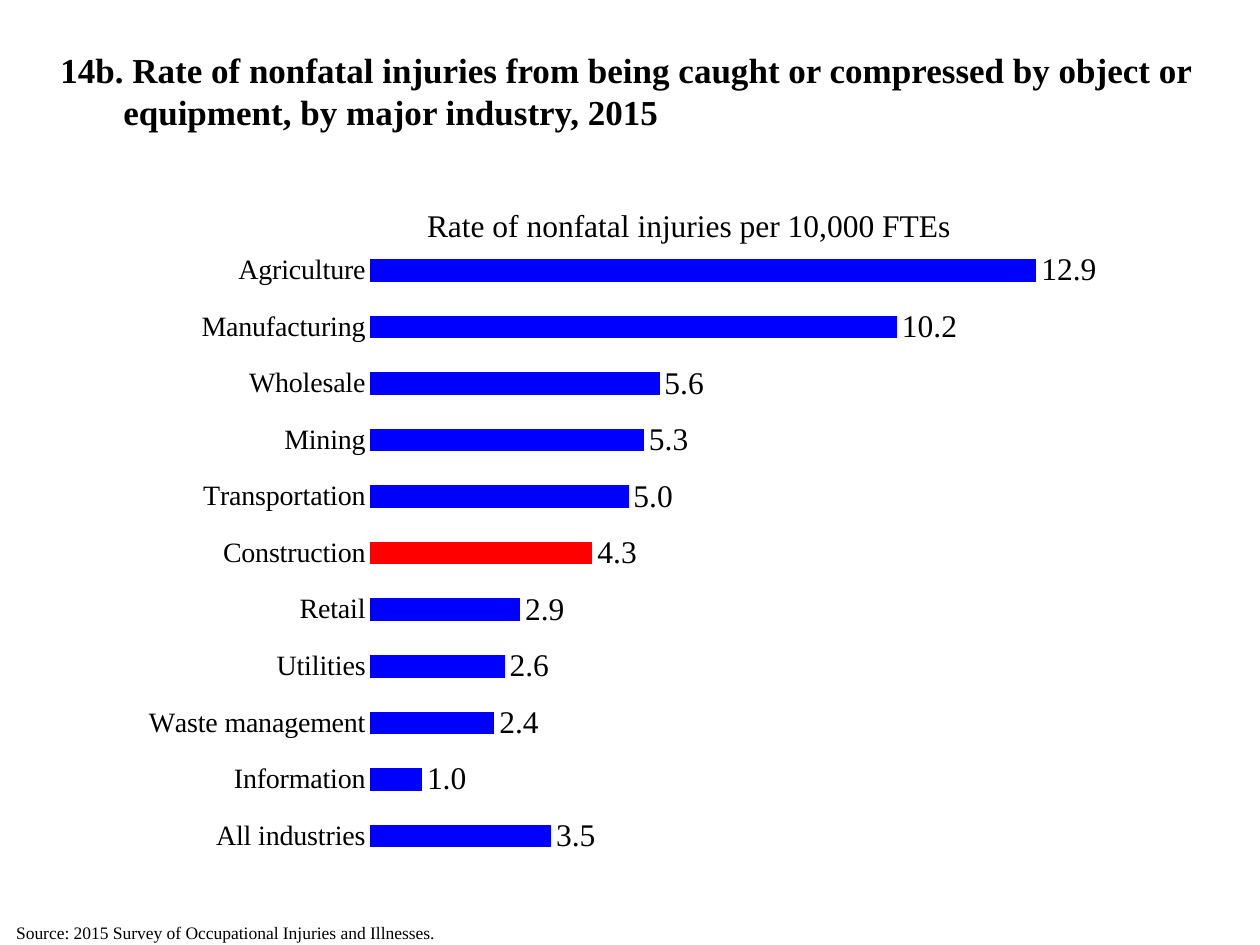
from dataclasses import dataclass

from lxml import etree
from pptx import Presentation
from pptx.chart.data import CategoryChartData
from pptx.dml.color import RGBColor
from pptx.enum import chart as charts, text
from pptx.oxml import ns
from pptx.util import Inches, Pt


@dataclass(frozen=True)
class Theme:
    font: str = "Times New Roman"
    ink: RGBColor = RGBColor(0, 0, 0)
    bar: RGBColor = RGBColor(0, 0, 255)
    highlight: RGBColor = RGBColor(255, 0, 0)
    title_size: int = 20
    chart_size: int = 18
    category_size: int = 16
    source_size: int = 10


THEME = Theme()
HIGHLIGHTED = "Construction"
RATES = {
    "All industries": 3.5,
    "Information": 1.0,
    "Waste management": 2.4,
    "Utilities": 2.6,
    "Retail": 2.9,
    "Construction": 4.3,
    "Transportation": 5.0,
    "Mining": 5.3,
    "Wholesale": 5.6,
    "Manufacturing": 10.2,
    "Agriculture": 12.9,
}


def apply(target, formats):
    for name, value in formats.items():
        setattr(target, name, value)


def style_font(font, size, bold=False):
    apply(font, {"name": THEME.font, "size": Pt(size), "bold": bold})
    font.color.rgb = THEME.ink


def add_text(slide, box, wording, size, bold=False, anchor=text.MSO_ANCHOR.TOP):
    frame = slide.shapes.add_textbox(*map(Inches, box)).text_frame
    apply(frame, {"word_wrap": True, "vertical_anchor": anchor})
    paragraph = frame.paragraphs[0]
    run = paragraph.add_run()
    run.text = wording
    style_font(run.font, size, bold)
    return paragraph


def set_hanging_indent(paragraph, indent):
    properties = paragraph._p.get_or_add_pPr()
    properties.set("marL", str(indent))
    properties.set("indent", str(-indent))


def place_manually(parent, position, values):
    for old in parent.findall(ns.qn("c:layout")):
        parent.remove(old)
    layout = etree.Element(ns.qn("c:layout"))
    manual = etree.SubElement(layout, ns.qn("c:manualLayout"))
    for name, value in values.items():
        etree.SubElement(manual, ns.qn(f"c:{name}")).set("val", str(value))
    parent.insert(position, layout)


def add_chart_title(chart, wording):
    frame = chart.chart_title.text_frame
    frame.text = wording
    style_font(frame.paragraphs[0].runs[0].font, THEME.chart_size)
    chart.chart_title.include_in_layout = False
    place_manually(chart.chart_title._element, 1,
                   {"xMode": "edge", "yMode": "edge", "x": 0.3, "y": 0.03})


def style_axes(chart):
    apply(chart.value_axis, {
        "visible": False, "has_major_gridlines": False,
        "minimum_scale": 0, "maximum_scale": 14, "major_unit": 1,
    })
    axis = chart.category_axis
    apply(axis, {
        "major_tick_mark": charts.XL_TICK_MARK.NONE,
        "minor_tick_mark": charts.XL_TICK_MARK.NONE,
        "has_major_gridlines": False,
    })
    axis.format.line.fill.background()
    style_font(axis.tick_labels.font, THEME.category_size)


def style_bars(plot):
    apply(plot, {"gap_width": 150, "overlap": -25,
                 "vary_by_categories": False, "has_data_labels": True})
    apply(plot.data_labels, {
        "show_value": True, "number_format": "#,##0.0",
        "number_format_is_linked": False,
        "position": charts.XL_LABEL_POSITION.OUTSIDE_END,
    })
    style_font(plot.data_labels.font, THEME.chart_size)
    series = plot.series[0]
    series.invert_if_negative = False
    highlighted = series.points[list(RATES).index(HIGHLIGHTED)]
    for element, color in ((series, THEME.bar), (highlighted, THEME.highlight)):
        element.format.fill.solid()
        element.format.fill.fore_color.rgb = color


def add_rate_chart(slide, box):
    data = CategoryChartData()
    data.categories = list(RATES)
    data.add_series("Series 1", list(RATES.values()))
    chart = slide.shapes.add_chart(
        charts.XL_CHART_TYPE.BAR_CLUSTERED, *map(Inches, box), data).chart
    chart.has_legend = False
    style_font(chart.font, THEME.chart_size)
    add_chart_title(chart, "Rate of nonfatal injuries per 10,000 FTEs")
    style_axes(chart)
    style_bars(chart.plots[0])
    place_manually(chart._chartSpace.chart.plotArea, 0, {
        "layoutTarget": "inner", "xMode": "edge", "yMode": "edge",
        "x": 0.25, "y": 0.09, "w": 0.71, "h": 0.885,
    })


def main():
    presentation = Presentation()
    apply(presentation, {"slide_width": Inches(10), "slide_height": Inches(7.5)})
    slide = presentation.slides.add_slide(presentation.slide_layouts[6])
    title = add_text(
        slide, (0.38, 0.33, 9.25, 0.77),
        "14b. Rate of nonfatal injuries from being caught or compressed by "
        "object or equipment, by major industry, 2015",
        THEME.title_size, bold=True, anchor=text.MSO_ANCHOR.MIDDLE)
    set_hanging_indent(title, Inches(0.5))
    add_rate_chart(slide, (0.92, 1.42, 8.08, 5.58))
    add_text(slide, (0.03, 7.27, 10, 0.27),
             "Source: 2015 Survey of Occupational Injuries and Illnesses.",
             THEME.source_size)
    presentation.save("out.pptx")


if __name__ == "__main__":
    main()
